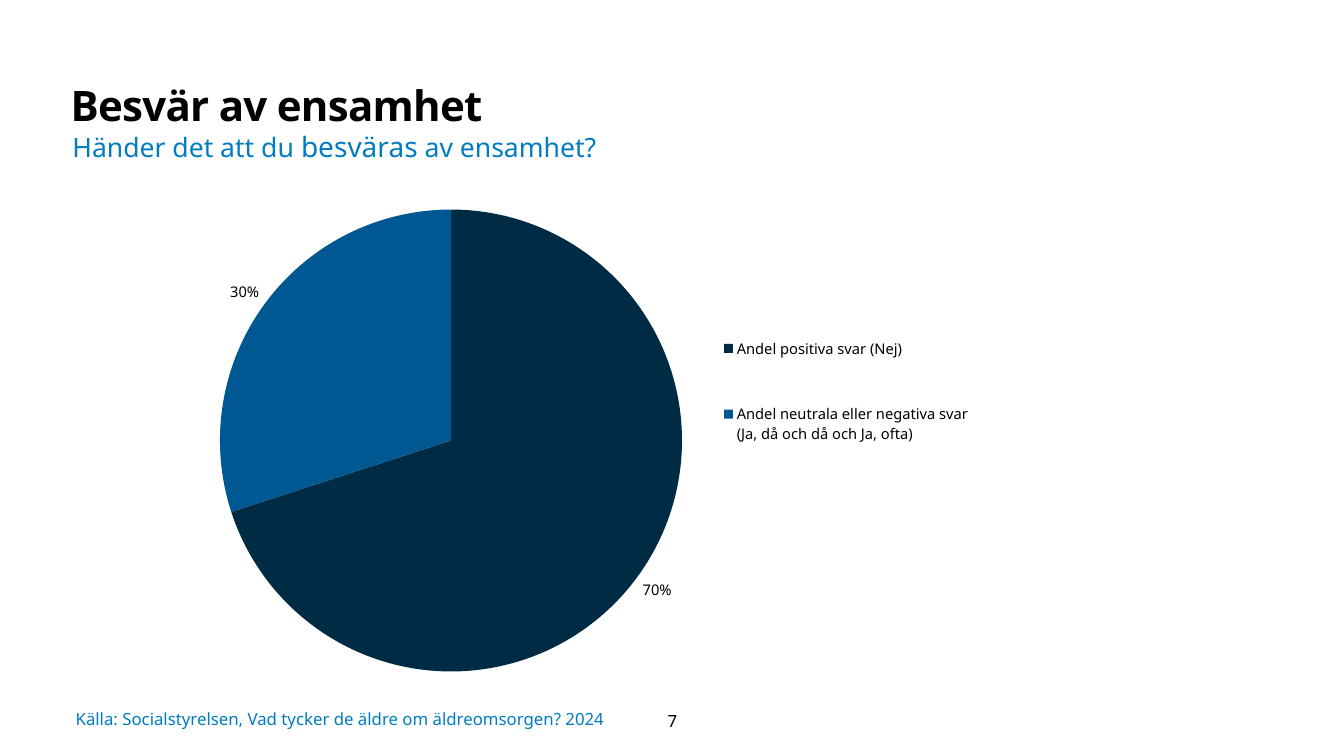
import pptx
import pptx.chart.data
import pptx.dml.color
import pptx.enum.chart
import pptx.enum.text
import pptx.util
from dataclasses import dataclass
from lxml import etree
from pptx.util import Inches, Pt


@dataclass(frozen=True)
class Theme:
    font: str = "Noto Sans"
    black: str = "000000"
    blue: str = "017CC1"
    slices: tuple = ("002B45", "005892")
    title: float = 30
    subtitle: float = 19
    emphasis: float = 20
    small: float = 12
    chart: float = 10.5


T = Theme()


def set_font(font, size, color):
    font.name = T.font
    font.size = Pt(size)
    font.color.rgb = pptx.dml.color.RGBColor.from_string(color)


def set_layout(element, inner, x, y, w, h):
    """Place a chart part by fractions of the chart area."""
    ns = "{http://schemas.openxmlformats.org/drawingml/2006/chart}"
    layout = element.find(ns + "layout")
    if layout is None:
        layout = etree.Element(ns + "layout")
        if inner:
            element.insert(0, layout)
        else:
            element.find(ns + "legendPos").addnext(layout)
    manual = etree.SubElement(layout, ns + "manualLayout")
    values = [("layoutTarget", "inner")] if inner else []
    values += [("xMode", "edge"), ("yMode", "edge"), ("x", x), ("y", y), ("w", w), ("h", h)]
    for tag, value in values:
        etree.SubElement(manual, ns + tag).set("val", str(value))


prs = pptx.Presentation()
prs.slide_width = Inches(13.33)
prs.slide_height = Inches(7.5)
s = prs.slides.add_slide(prs.slide_layouts[5])

# Title
title = s.shapes.title
title.left, title.top, title.width, title.height = map(Inches, (0.7, 0.74, 10.63, 0.49))
tf = title.text_frame
tf.auto_size = pptx.enum.text.MSO_AUTO_SIZE.NONE
tf.vertical_anchor = pptx.enum.text.MSO_ANCHOR.TOP
tf.margin_left = tf.margin_top = 0
tf.margin_right, tf.margin_bottom = Inches(0.1), Inches(0.05)
p = tf.paragraphs[0]
p.alignment = pptx.enum.text.PP_ALIGN.LEFT
p.line_spacing = 1.1
r = p.add_run()
r.text = "Besvär av ensamhet"
set_font(r.font, T.title, T.black)
r.font.bold = True
r.font._element.set("spc", "-50")

# Question
tf = s.shapes.add_textbox(Inches(0.62), Inches(1.24), Inches(10.15), Inches(0.44)).text_frame
tf.word_wrap = True
tf.auto_size = pptx.enum.text.MSO_AUTO_SIZE.SHAPE_TO_FIT_TEXT
for text, size in (
    ("Händer det att du ", T.subtitle),
    ("besväras", T.emphasis),
    (" av ensamhet?", T.subtitle),
):
    r = tf.paragraphs[0].add_run()
    r.text = text
    set_font(r.font, size, T.blue)

# Pie chart
data = pptx.chart.data.CategoryChartData()
data.categories = [
    "Andel positiva svar (Nej)",
    "Andel neutrala eller negativa svar (Ja, då och då och Ja, ofta)",
]
data.add_series("Series 1", (70, 30))
chart = s.shapes.add_chart(
    pptx.enum.chart.XL_CHART_TYPE.PIE,
    Inches(1.27), Inches(1.77), Inches(8.43), Inches(5.15), data,
).chart
chart.has_title = False
set_font(chart.font, T.chart, T.black)
plot = chart.plots[0]
plot.vary_by_categories = True
for i, color in enumerate(T.slices):
    fill = plot.series[0].points[i].format.fill
    fill.solid()
    fill.fore_color.rgb = pptx.dml.color.RGBColor.from_string(color)

# Percent labels
plot.has_data_labels = True
labels = plot.data_labels
labels.show_percentage = True
labels.show_value = False
labels.number_format = "0%"
labels.number_format_is_linked = False
labels.position = pptx.enum.chart.XL_LABEL_POSITION.OUTSIDE_END
set_font(labels.font, T.chart, T.black)

# Legend and plot placement
chart.has_legend = True
legend = chart.legend
legend.position = pptx.enum.chart.XL_LEGEND_POSITION.RIGHT
legend.include_in_layout = False
set_font(legend.font, T.chart, T.black)
set_layout(legend._element, False, 0.7, 0.22, 0.29, 0.38)
set_layout(chart._chartSpace.chart.plotArea, True, 0.09, 0.06, 0.58, 0.89)

# Source line and page number
for text, box, margin, color, align in (
    ("Källa: Socialstyrelsen, Vad tycker de äldre om äldreomsorgen? 2024",
     (0.75, 6.99, 5.91, 0.29), 0, T.blue, pptx.enum.text.PP_ALIGN.LEFT),
    ("7", (6.16, 6.95, 1.02, 0.4), 0.05, T.black, pptx.enum.text.PP_ALIGN.CENTER),
):
    tf = s.shapes.add_textbox(*map(Inches, box)).text_frame
    tf.word_wrap = True
    tf.vertical_anchor = pptx.enum.text.MSO_ANCHOR.MIDDLE
    tf.margin_left = tf.margin_right = tf.margin_top = tf.margin_bottom = Inches(margin)
    p = tf.paragraphs[0]
    p.text = text
    p.alignment = align
    set_font(p.font, T.small, color)

prs.save("out.pptx")
